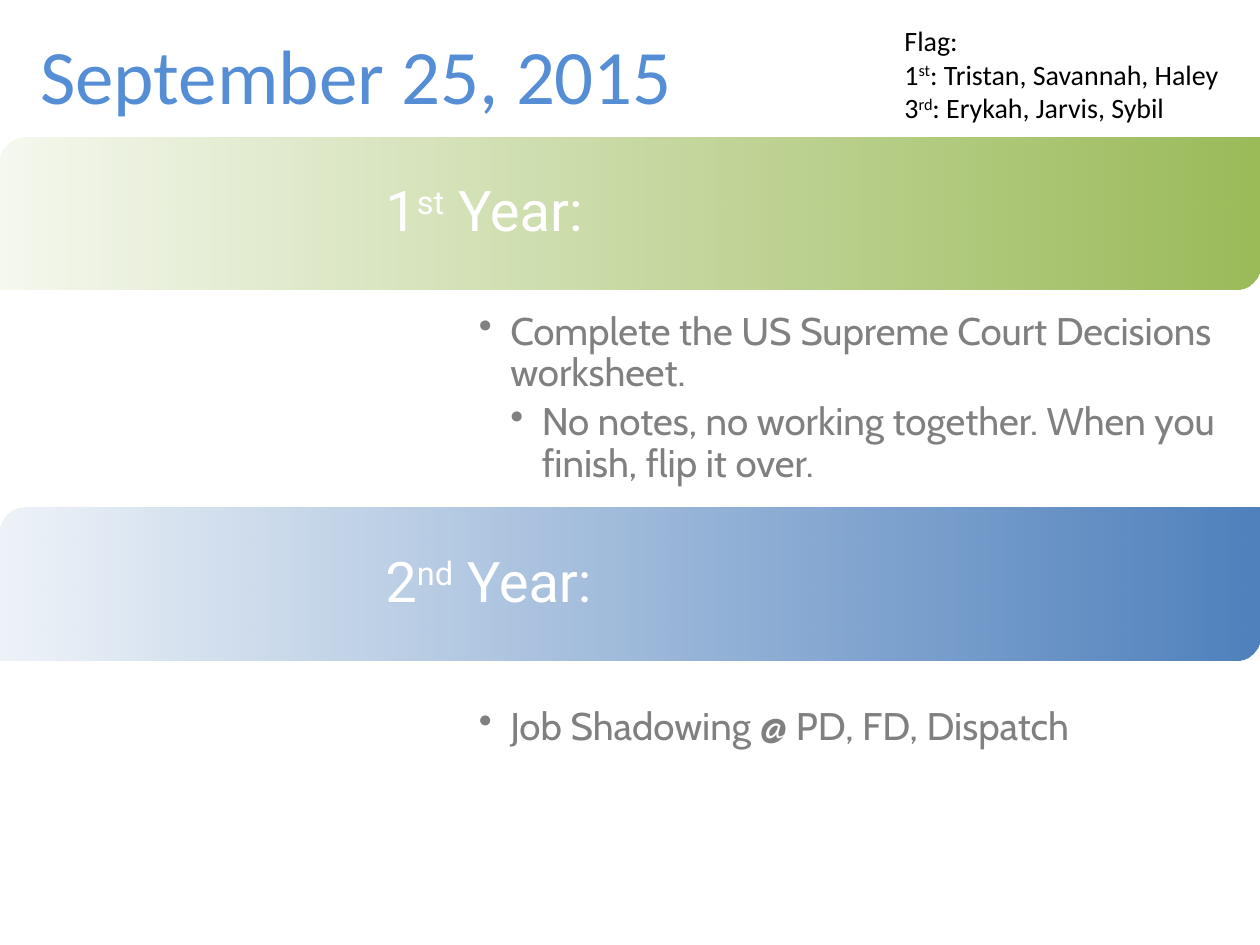
from lxml import etree
from pptx import Presentation
from pptx import util as u
from pptx.dml.color import RGBColor
from pptx.enum import shapes, text
from pptx.oxml.ns import qn

WIDTH, HEIGHT = 10, 7.5
TOP, BAND_HEIGHT = 1.09, 1.21
COLORS = {"title": "558ED5", "first": "9BBB59", "second": "4F81BD",
          "heading": "FFFFFF", "task": "808080", "flag": "000000"}
STYLES = {
    "title": {"name": "Calibri", "size": u.Pt(44)},
    "heading": {"name": "Roboto", "size": u.Pt(32)},
    "task": {"name": "Cabin", "size": u.Pt(22)},
    "flag": {"name": "Calibri", "size": u.Pt(16)},
}
YEARS = [
    ("first", ("1", "st", " Year:"), 1.73, [
        (1, "Complete the US Supreme Court Decisions worksheet."),
        (2, "No notes, no working together. When you finish, flip it over."),
    ]),
    ("second", ("2", "nd", " Year:"), 1.07, [
        (1, "Job Shadowing @ PD, FD, Dispatch"),
    ]),
]
FLAG_DUTY = [("Flag:",),
             ("1", "st", ": Tristan, Savannah, Haley"),
             ("3", "rd", ": Erykah, Jarvis, Sybil")]


def inches(*lengths):
    return [u.Inches(length) for length in lengths]


def apply(target, values):
    for key, value in values.items():
        setattr(target, key, value)


def write(paragraph, pieces, style):
    for position, piece in enumerate(pieces):
        run = paragraph.add_run()
        run.text = piece
        apply(run.font, STYLES[style])
        run.font.color.rgb = RGBColor.from_string(COLORS[style])
        if position == 1:
            run._r.get_or_add_rPr().set("baseline", "30000")


def set_frame(frame, left, top, right, bottom):
    margins = inches(left, top, right, bottom)
    sides = ("margin_left", "margin_top", "margin_right", "margin_bottom")
    apply(frame, dict(zip(sides, margins), word_wrap=True,
                      vertical_anchor=text.MSO_ANCHOR.MIDDLE))


def add_band(slide, top, year, heading):
    band = slide.shapes.add_shape(shapes.MSO_SHAPE.ROUND_2_DIAG_RECTANGLE,
                                  *inches(0, top, WIDTH, BAND_HEIGHT))
    band.shadow.inherit = False
    band.line.fill.background()
    band.fill.gradient()
    band.fill.gradient_angle = 0
    for stop in band.fill.gradient_stops:
        stop.color.rgb = RGBColor.from_string(COLORS[year])
    faded = next(band._element.spPr.iter(qn("a:srgbClr")))
    etree.SubElement(faded, qn("a:alpha"), val="10000")
    set_frame(band.text_frame, 3, 0.13, 0.13, 0.13)
    paragraph = band.text_frame.paragraphs[0]
    apply(paragraph, {"alignment": text.PP_ALIGN.LEFT, "line_spacing": 0.9})
    write(paragraph, heading, "heading")


def add_tasks(slide, top, height, tasks):
    frame = slide.shapes.add_textbox(*inches(0, top, WIDTH, height)).text_frame
    set_frame(frame, 3.8, 0.2, 0.17, 0.2)
    for index, (level, task) in enumerate(tasks):
        paragraph = frame.add_paragraph() if index else frame.paragraphs[0]
        apply(paragraph, {"level": level, "line_spacing": 0.9,
                          "space_after": u.Pt(4.4)})
        properties = paragraph._p.get_or_add_pPr()
        properties.set("marL", str(u.Inches(0.25 * level)))
        properties.set("indent", str(u.Inches(-0.25)))
        etree.SubElement(properties, qn("a:buChar"), char="•")
        write(paragraph, [task], "task")


def add_title(slide, date):
    title = slide.shapes.title
    position = inches(0.04, 0, 5.58, 1.17)
    apply(title, dict(zip(("left", "top", "width", "height"), position)))
    title.text_frame.vertical_anchor = text.MSO_ANCHOR.MIDDLE
    paragraph = title.text_frame.paragraphs[0]
    paragraph.alignment = text.PP_ALIGN.CENTER
    write(paragraph, [date], "title")


def add_flag_duty(slide):
    frame = slide.shapes.add_textbox(*inches(7.08, 0.14, 2.92, 0.94)).text_frame
    apply(frame, {"word_wrap": True,
                  "auto_size": text.MSO_AUTO_SIZE.SHAPE_TO_FIT_TEXT})
    for index, pieces in enumerate(FLAG_DUTY):
        paragraph = frame.add_paragraph() if index else frame.paragraphs[0]
        write(paragraph, pieces, "flag")


def main():
    deck = Presentation()
    deck.slide_width, deck.slide_height = inches(WIDTH, HEIGHT)
    slide = deck.slides.add_slide(deck.slide_layouts[5])
    add_title(slide, "September 25, 2015")
    top = TOP
    for year, heading, tasks_height, tasks in YEARS:
        add_band(slide, top, year, heading)
        add_tasks(slide, top + BAND_HEIGHT, tasks_height, tasks)
        top += BAND_HEIGHT + tasks_height
    add_flag_duty(slide)
    deck.save("out.pptx")


if __name__ == "__main__":
    main()
